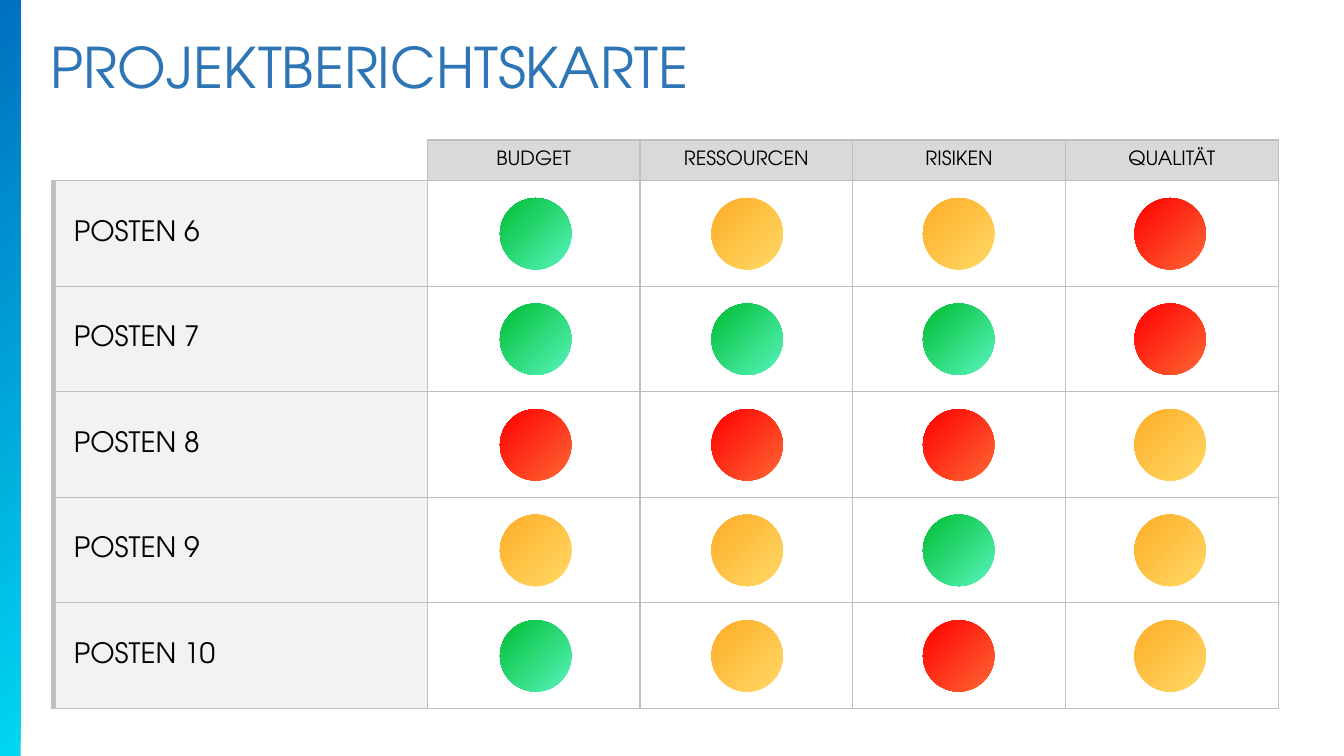
from lxml import etree
from pptx import Presentation
from pptx import util as u
from pptx.dml.color import RGBColor
from pptx.enum import shapes, text
from pptx.oxml import ns

FONT = "TeX Gyre Adventor"
BORDER = "BFBFBF"
HEADINGS = ["BUDGET", "RESSOURCEN", "RISIKEN", "QUALITÄT"]
RATINGS = {
    "POSTEN 6": "GYYR",
    "POSTEN 7": "GGGR",
    "POSTEN 8": "RRRY",
    "POSTEN 9": "YYGY",
    "POSTEN 10": "GYRY",
}
LIGHTS = {
    "G": ("58F5BE", "00BD32"),
    "Y": ("FFD966", "FEAD27"),
    "R": ("FE6735", "FF0000"),
}


def rgb(value):
    return RGBColor.from_string(value)


def write(frame, content, size=14, color="000000", align=text.PP_ALIGN.LEFT):
    para = frame.paragraphs[0]
    para.alignment = align
    span = para.add_run()
    span.text = content
    span.font.name = FONT
    span.font.size = u.Pt(size)
    span.font.color.rgb = rgb(color)


def add_title(page, content):
    title = page.shapes.title
    title.left, title.top, title.width, title.height = map(u.Cm, (1.02, 0.69, 16.79, 1.96))
    frame = title.text_frame
    frame.word_wrap = False
    frame.auto_size = text.MSO_AUTO_SIZE.SHAPE_TO_FIT_TEXT
    frame.vertical_anchor = text.MSO_ANCHOR.TOP
    write(frame, content, size=40, color="2E75B6")


def add_gradient_shape(page, kind, left, top, width, height, colors):
    shape = page.shapes.add_shape(kind, *map(u.Cm, (left, top, width, height)))
    shape.shadow.inherit = False
    shape.line.fill.background()
    shape.fill.gradient()
    shape.fill.gradient_angle = 135
    for stop, color in zip(shape.fill.gradient_stops, colors):
        stop.color.rgb = rgb(color)


def set_borders(cell, left=1, right=1, top=1, bottom=1):
    properties = cell._tc.get_or_add_tcPr()
    for side, width in zip("LRTB", (left, right, top, bottom)):
        line = etree.SubElement(properties, ns.qn(f"a:ln{side}"), w=str(u.Pt(width)))
        if width:
            fill = etree.SubElement(line, ns.qn("a:solidFill"))
            etree.SubElement(fill, ns.qn("a:srgbClr"), val=BORDER)
        else:
            etree.SubElement(line, ns.qn("a:noFill"))


def format_cell(cell, color=None, indent=0.15, **borders):
    cell.margin_left, cell.margin_right = u.Cm(indent), u.Cm(0.15)
    cell.margin_top = cell.margin_bottom = 0
    cell.vertical_anchor = text.MSO_ANCHOR.MIDDLE
    set_borders(cell, **borders)
    if color:
        cell.fill.solid()
        cell.fill.fore_color.rgb = rgb(color)
    else:
        cell.fill.background()


def add_report_table(page):
    widths = [9.42] + [5.36] * len(HEADINGS)
    heights = [1.02] + [2.66] * len(RATINGS)
    table = page.shapes.add_table(
        len(heights), len(widths), u.Cm(1.35), u.Cm(3.53),
        u.Cm(sum(widths)), u.Cm(sum(heights)),
    ).table
    table.first_row = table.horz_banding = False
    for column, width in zip(table.columns, widths):
        column.width = u.Cm(width)
    for row, height in zip(table.rows, heights):
        row.height = u.Cm(height)

    format_cell(table.cell(0, 0), left=0, top=0)
    for column, heading in enumerate(HEADINGS, 1):
        cell = table.cell(0, column)
        format_cell(cell, "D9D9D9")
        write(cell.text_frame, heading, align=text.PP_ALIGN.CENTER)
    for row, item in enumerate(RATINGS, 1):
        label = table.cell(row, 0)
        format_cell(label, "F2F2F2", indent=0.51, left=4.5)
        write(label.text_frame, item, size=20)
        for column in range(1, len(widths)):
            format_cell(table.cell(row, column), "FFFFFF")


def add_lights(page):
    for row, ratings in enumerate(RATINGS.values()):
        for column, rating in enumerate(ratings):
            add_gradient_shape(
                page, shapes.MSO_SHAPE.OVAL,
                12.6 + 5.33 * column, 4.99 + 2.66 * row, 1.8, 1.8, LIGHTS[rating],
            )


def main():
    deck = Presentation()
    deck.slide_width, deck.slide_height = u.Cm(33.87), u.Cm(19.05)
    page = deck.slides.add_slide(deck.slide_layouts[5])
    add_title(page, "PROJEKTBERICHTSKARTE")
    add_gradient_shape(
        page, shapes.MSO_SHAPE.RECTANGLE, 0, 0, 0.52, 19.05, ("00D6F1", "0070C0")
    )
    add_report_table(page)
    add_lights(page)
    deck.save("out.pptx")


if __name__ == "__main__":
    main()
